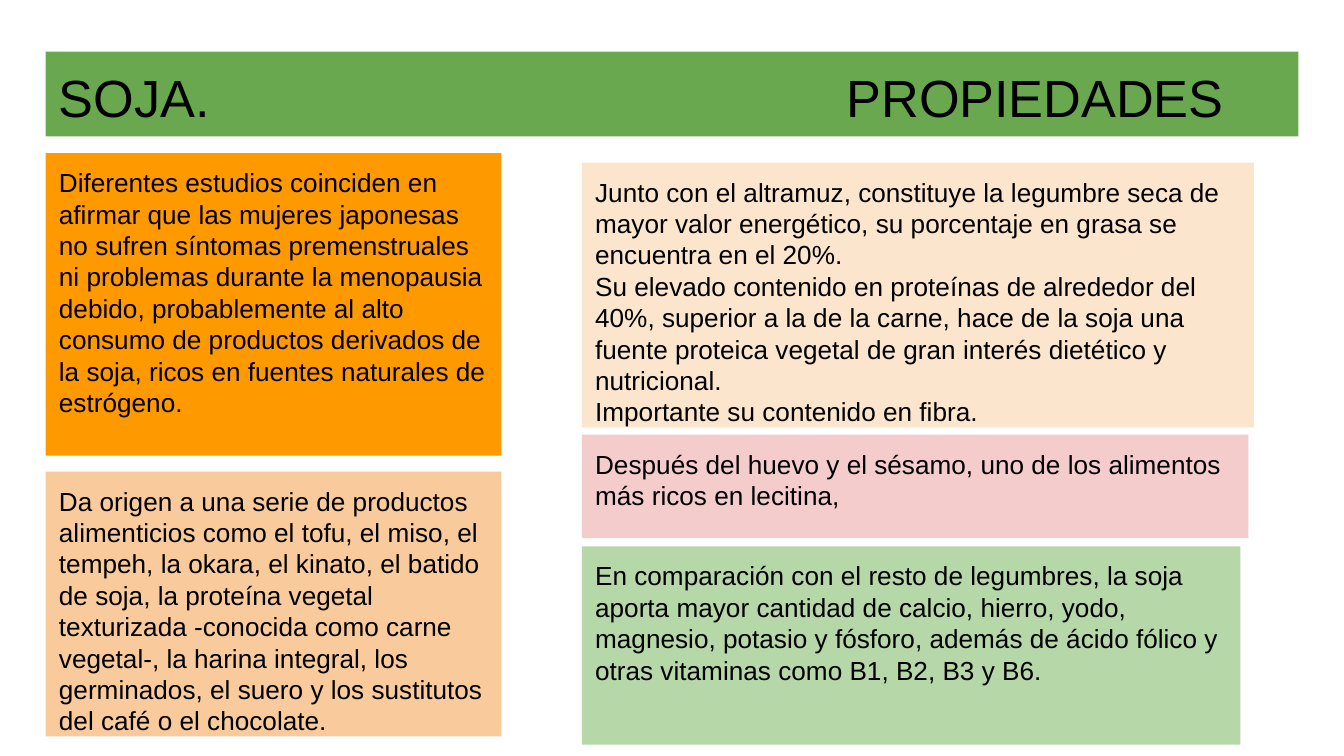
from pptx import Presentation
from pptx.dml.color import RGBColor as RGB
from pptx.enum.shapes import MSO_SHAPE as SHAPE
from pptx.enum.text import MSO_ANCHOR as ANCHOR, PP_ALIGN as ALIGN
from pptx.oxml import parse_xml
from pptx.oxml.ns import nsdecls
from pptx.util import Pt

PX = 4572  # 200 px to the inch
INSET = 20
COLORS = {
    "text": "000000",
    "banner": "6AA84F",
    "studies": "FF9900",
    "products": "F9CB9C",
    "nutrition": "FCE5CD",
    "lecithin": "F4CCCC",
    "minerals": "B6D7A8",
}
STUDIES = [
    "Diferentes estudios coinciden en afirmar que las mujeres japonesas no sufren "
    "síntomas premenstruales ni problemas durante la menopausia debido, probablemente "
    "al alto consumo de productos derivados de la soja, ricos en fuentes naturales de "
    "estrógeno.",
]
PRODUCTS = [
    "Da origen a una serie de productos alimenticios como el tofu, el miso, el tempeh, "
    "la okara, el kinato, el batido de soja, la proteína vegetal texturizada -conocida "
    "como carne vegetal-, la harina integral, los germinados, el suero y los sustitutos "
    "del café o el chocolate.",
]
NUTRITION = [
    "Junto con el altramuz, constituye la legumbre seca de mayor valor energético, "
    "su porcentaje en grasa se encuentra en el 20%.",
    "Su elevado contenido en proteínas de alrededor del 40%, superior a la de la carne, "
    "hace de la soja una fuente proteica vegetal de gran interés dietético y nutricional.",
    "Importante su contenido en fibra.",
]
LECITHIN = [
    "Después del huevo y el sésamo, uno de los alimentos más ricos en lecitina,",
]
MINERALS = [
    "En comparación con el resto de legumbres, la soja aporta mayor cantidad de calcio, "
    "hierro, yodo, magnesio, potasio y fósforo, además de ácido fólico y otras vitaminas "
    "como B1, B2, B3 y B6.",
]


def add_panel(slide, box, color, paragraphs, size=14, tab=None):
    """Filled rectangle with top-left text; tab is measured from the text edge."""
    panel = slide.shapes.add_shape(SHAPE.RECTANGLE, *(n * PX for n in box))
    panel.shadow.inherit = False
    panel.fill.solid()
    panel.fill.fore_color.rgb = RGB.from_string(COLORS[color])
    panel.line.fill.background()

    frame = panel.text_frame
    frame.word_wrap = True
    frame.vertical_anchor = ANCHOR.TOP
    frame.margin_left = frame.margin_right = INSET * PX
    frame.margin_top = frame.margin_bottom = INSET * PX
    for i, text in enumerate(paragraphs):
        line = frame.add_paragraph() if i else frame.paragraphs[0]
        line.alignment = ALIGN.LEFT
        if tab:
            line._p.get_or_add_pPr().append(parse_xml(
                f'<a:tabLst {nsdecls("a")}><a:tab pos="{tab * PX}" algn="l"/></a:tabLst>'))
        run = line.add_run()
        run.text = text
        run.font.name = "Arial"
        run.font.size = Pt(size)
        run.font.color.rgb = RGB.from_string(COLORS["text"])


def add_banner(slide, box):
    add_panel(slide, box, "banner", ["SOJA.\tPROPIEDADES"], size=28, tab=1172)


def add_column(slide, box, panels):
    """Stack of panels, each given as offset, trim, height, colour and text."""
    left, top, width, _ = box
    for offset, trim, height, color, paragraphs in panels:
        add_panel(slide, (left, top + offset, width - trim, height), color, paragraphs)


def main():
    deck = Presentation()
    deck.slide_width, deck.slide_height = 2000 * PX, 1125 * PX
    slide = deck.slides.add_slide(deck.slide_layouts[6])

    # Title band
    add_banner(slide, (68, 77, 1864, 126))

    # Left column: studies and derived products
    add_column(slide, (68, 228, 678, 868), [
        (0, 0, 450, "studies", STUDIES),
        (474, 0, 394, "products", PRODUCTS),
    ])

    # Right column: nutritional properties, each panel a little narrower
    add_column(slide, (866, 242, 1000, 866), [
        (0, 0, 394, "nutrition", NUTRITION),
        (405, 8, 154, "lecithin", LECITHIN),
        (571, 20, 295, "minerals", MINERALS),
    ])

    deck.save("out.pptx")


if __name__ == "__main__":
    main()
